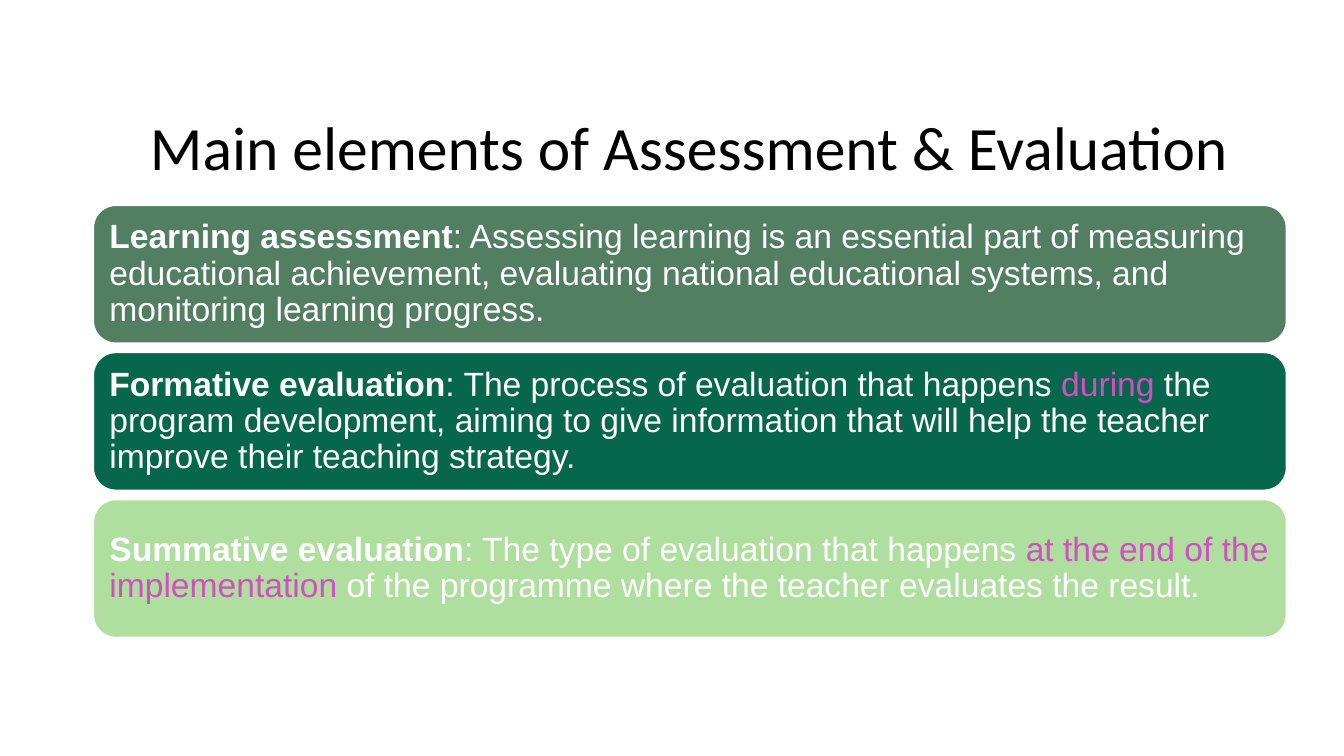
import pptx
import pptx.util
import pptx.dml.color
import pptx.enum.shapes
import pptx.enum.text

Pt = pptx.util.Pt
PP_ALIGN = pptx.enum.text.PP_ALIGN
MIDDLE = pptx.enum.text.MSO_ANCHOR.MIDDLE

# Content
TITLE = "Main elements of Assessment & Evaluation"
WHITE, PINK = "FFFFFF", "D34DC3"
# Each panel: fill, then runs of (text, colour, bold)
PANELS = [
    ("527F62", [
        ("Learning assessment", WHITE, True),
        (": Assessing learning is an essential part of measuring educational "
         "achievement, evaluating national educational systems, and monitoring "
         "learning progress.", WHITE, False),
    ]),
    ("07674D", [
        ("Formative evaluation", WHITE, True),
        (": The process of evaluation that happens ", WHITE, False),
        ("during", PINK, False),
        (" the program development, aiming to give information that will help "
         "the teacher improve their teaching strategy.", WHITE, False),
    ]),
    ("AFDF9F", [
        ("Summative evaluation", WHITE, True),
        (": The type of evaluation that happens ", WHITE, False),
        ("at the end of the implementation ", PINK, False),
        ("of the programme where the teacher evaluates the result.", WHITE, False),
    ]),
]

# Layout, in points
LEFT, TOP, WIDTH, HEIGHT, GAP = 66.2, 146.2, 853.2, 99.4, 5.7
INSET = 7.2


def rgb(value):
    return pptx.dml.color.RGBColor.from_string(value)


def format_run(r, font, size, color, bold=False):
    r.font.name = font
    r.font.size = Pt(size)
    r.font.bold = bold
    r.font.color.rgb = rgb(color)


def add_panel(s, top, fill, runs):
    sp = s.shapes.add_shape(pptx.enum.shapes.MSO_SHAPE.ROUNDED_RECTANGLE,
                            Pt(LEFT), Pt(top), Pt(WIDTH), Pt(HEIGHT))
    sp.shadow.inherit = False
    sp.fill.solid()
    sp.fill.fore_color.rgb = rgb(fill)
    sp.line.color.rgb = rgb(WHITE)
    sp.line.width = Pt(2)
    tf = sp.text_frame
    tf.word_wrap = True
    tf.vertical_anchor = MIDDLE
    tf.margin_left = tf.margin_right = tf.margin_top = tf.margin_bottom = Pt(INSET)
    p = tf.paragraphs[0]
    p.alignment = PP_ALIGN.LEFT
    p.line_spacing = 0.9
    for text, color, bold in runs:
        r = p.add_run()
        r.text = text
        format_run(r, "Arial", 24, color, bold)


prs = pptx.Presentation()
prs.slide_width, prs.slide_height = Pt(960), Pt(540)
s = prs.slides.add_slide(prs.slide_layouts[5])

# Title
title = s.shapes.title
title.left, title.top, title.width, title.height = Pt(78.5), Pt(59), Pt(828), Pt(97.2)
tf = title.text_frame
tf.text = TITLE
tf.word_wrap = True
tf.vertical_anchor = MIDDLE
p = tf.paragraphs[0]
p.alignment = PP_ALIGN.CENTER
p.line_spacing = 0.9
format_run(p.runs[0], "Calibri", 44, "000000")

# Stacked panels
for i, (fill, runs) in enumerate(PANELS):
    add_panel(s, TOP + i * (HEIGHT + GAP), fill, runs)

prs.save("out.pptx")
